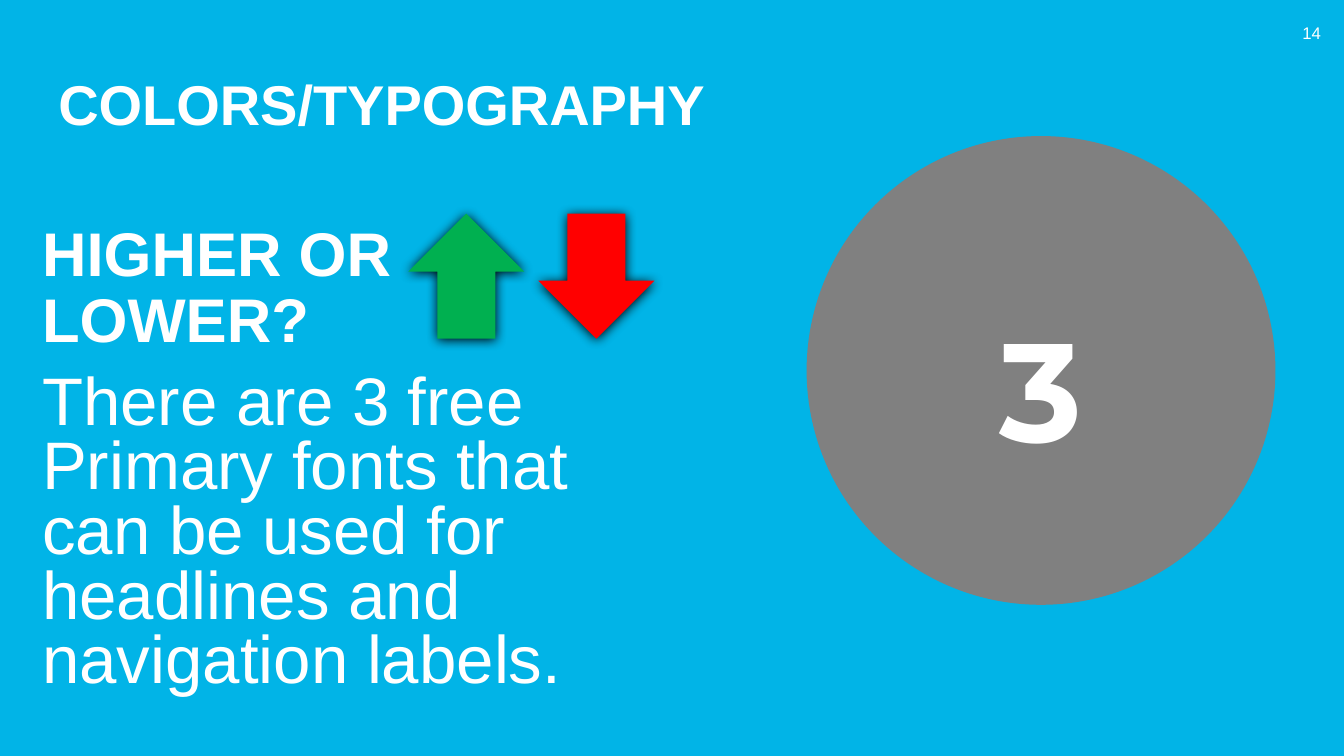
from lxml import etree
from pptx import Presentation
from pptx import util as u
from pptx.dml.color import RGBColor
from pptx.enum import shapes, text
from pptx.oxml.ns import qn

COLORS = {
    "sky": "01B4E7",
    "gray": "808080",
    "green": "00B050",
    "red": "FF0000",
    "white": "FFFFFF",
    "black": "000000",
}
SLIDE = (13.33, 7.5)
CIRCLE = (8, 1.35, 4.65, 4.65)
ARROW = {"left": 4.05, "top": 2.12, "width": 1.15, "height": 1.24, "step": 1.29}
ARROWS = [("green", 0), ("red", 180)]
SHADOW = {"blurRad": u.Pt(8.5), "dist": u.Pt(1), "dir": 90 * 60000, "rotWithShape": 0}

TEXTS = [
    {
        "text": "There are 3 free Primary fonts that can be used for headlines and navigation labels.",
        "box": (0.32, 3.66, 6.61, 3.42),
        "font": {"size": u.Pt(48)},
        "para": {"line_spacing": 0.8, "space_before": u.Pt(10)},
    },
    {
        "text": "HIGHER OR LOWER?",
        "box": (0.32, 2.34, 6.46, 1.24),
        "font": {"size": u.Pt(44), "bold": True},
        "para": {"line_spacing": 0.9, "space_before": u.Pt(10)},
        "frame": {"vertical_anchor": text.MSO_ANCHOR.BOTTOM},
    },
    {
        "text": "14",
        "box": (12.74, 0.13, 0.46, 0.4),
        "font": {"size": u.Pt(12)},
        "para": {"alignment": text.PP_ALIGN.RIGHT},
        "frame": {"vertical_anchor": text.MSO_ANCHOR.MIDDLE},
    },
    {
        "text": "3",
        "box": (8, 2.95, 4.65, 1.78),
        "font": {"name": "Montserrat", "size": u.Pt(100), "bold": True},
        "para": {"alignment": text.PP_ALIGN.CENTER},
        "frame": {"auto_size": text.MSO_AUTO_SIZE.SHAPE_TO_FIT_TEXT},
    },
    {
        "text": "COLORS/TYPOGRAPHY",
        "box": (0.48, 0.64, 9.27, 0.77),
        "font": {"size": u.Pt(40), "bold": True},
        "frame": {"auto_size": text.MSO_AUTO_SIZE.SHAPE_TO_FIT_TEXT},
    },
]


def rgb(name):
    return RGBColor.from_string(COLORS[name])


def set_all(obj, values):
    for key, value in values.items():
        setattr(obj, key, value)


def add_filled(s, kind, box, color):
    sp = s.shapes.add_shape(kind, *map(u.Inches, box))
    sp.shadow.inherit = False
    sp.fill.solid()
    sp.fill.fore_color.rgb = rgb(color)
    sp.line.fill.background()
    return sp


def add_shadow(sp):
    effects = sp._element.spPr.find(qn("a:effectLst"))
    shadow = etree.SubElement(effects, qn("a:outerShdw"))
    for key, value in SHADOW.items():
        shadow.set(key, str(int(value)))
    etree.SubElement(shadow, qn("a:srgbClr")).set("val", COLORS["black"])


def add_text(s, item):
    tf = s.shapes.add_textbox(*map(u.Inches, item["box"])).text_frame
    set_all(tf, {"word_wrap": True, **item.get("frame", {})})
    p = tf.paragraphs[0]
    set_all(p, item.get("para", {}))
    r = p.add_run()
    r.text = item["text"]
    set_all(r.font, {"name": "Arial", **item["font"]})
    r.font.color.rgb = rgb("white")


def main():
    prs = Presentation()
    prs.slide_width, prs.slide_height = map(u.Inches, SLIDE)
    s = prs.slides.add_slide(prs.slide_layouts[6])
    add_filled(s, shapes.MSO_SHAPE.RECTANGLE, (0, 0, *SLIDE), "sky")
    add_filled(s, shapes.MSO_SHAPE.OVAL, CIRCLE, "gray")
    for i, (color, rotation) in enumerate(ARROWS):
        left = ARROW["left"] + i * ARROW["step"]
        box = (left, ARROW["top"], ARROW["width"], ARROW["height"])
        sp = add_filled(s, shapes.MSO_SHAPE.UP_ARROW, box, color)
        sp.rotation = rotation
        add_shadow(sp)
    for item in TEXTS:
        add_text(s, item)
    prs.save("out.pptx")


if __name__ == "__main__":
    main()
